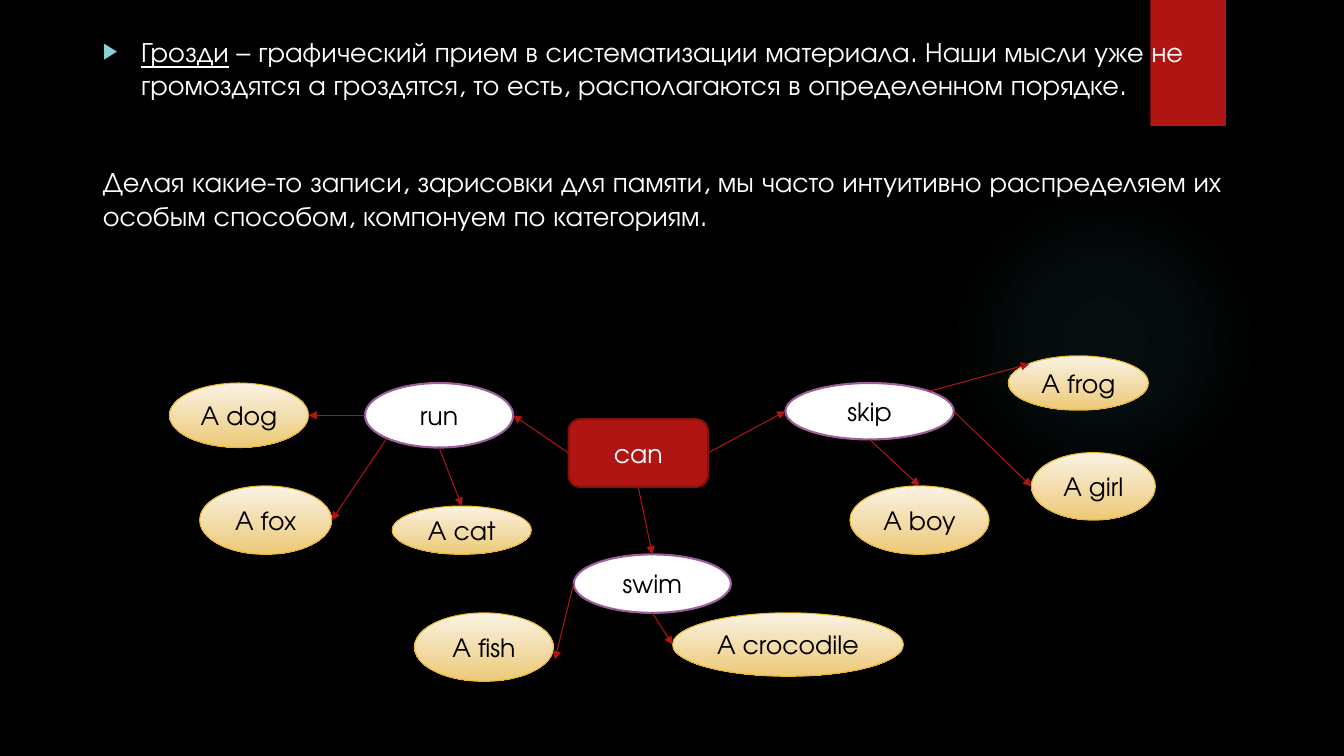
from lxml.etree import SubElement as Sub
from pptx import Presentation
from pptx.dml.color import RGBColor
from pptx.enum.shapes import MSO_CONNECTOR as Link, MSO_SHAPE as Shape
from pptx.enum.text import MSO_ANCHOR as Anchor, MSO_AUTO_SIZE as AutoSize, PP_ALIGN as Align
from pptx.oxml import parse_xml
from pptx.oxml.ns import nsdecls, qn
from pptx.util import Pt

PX = 9144
FONT = "TeX Gyre Adventor"
RED, WHITE, BLACK = "B01513", "FFFFFF", "000000"
CREAM = ("FAF2E3", "ECC977")

STYLES = {
    "root": (Shape.ROUNDED_RECTANGLE, RED, "82100E", 1.5, WHITE),
    "verb": (Shape.OVAL, WHITE, "9E5E9B", 1.5, BLACK),
    "animal": (Shape.OVAL, CREAM, "E6B729", 0.75, BLACK),
}
NODES = {
    "A frog": ("animal", (908, 324, 139, 54)),
    "can": ("root", (472, 387, 138, 67)),
    "run": ("verb", (270, 351, 147, 64)),
    "swim": ("verb", (477, 521, 156, 58)),
    "skip": ("verb", (687, 351, 167, 56)),
    "A dog": ("animal", (76, 351, 138, 64)),
    "A fox": ("animal", (106, 453, 131, 68)),
    "A cat": ("animal", (297, 473, 138, 48)),
    "A fish": ("animal", (319, 579, 138, 68)),
    "A crocodile": ("animal", (575, 579, 229, 63)),
    "A girl": ("animal", (931, 420, 123, 67)),
    "A boy": ("animal", (751, 453, 138, 68)),
}
SITES = {
    "top": (0.5, 0), "bottom": (0.5, 1), "left": (0, 0.5), "right": (1, 0.5),
    "top left": (0.15, 0.15), "top right": (0.85, 0.15),
    "bottom left": (0.15, 0.85), "low right": (1.01, 0.68),
}
ARROWS = [
    ("run", "left", "A dog", "right"),
    ("run", "bottom left", "A fox", "right"),
    ("run", "bottom", "A cat", "top"),
    ("can", "left", "run", "right"),
    ("can", "bottom", "swim", "top"),
    ("can", "right", "skip", "left"),
    ("swim", "left", "A fish", "low right"),
    ("swim", "bottom", "A crocodile", "left"),
    ("skip", "bottom", "A boy", "top"),
    ("skip", "right", "A girl", "left"),
    ("skip", "top right", "A frog", "top left"),
]


def px(*lengths):
    """Turn px lengths into EMU."""
    return [round(length * PX) for length in lengths]


def rgb(value):
    """Turn a hex string into a colour."""
    return RGBColor.from_string(value)


def add_run(paragraph, text, size, color, underline=False):
    """Add one formatted run."""
    run = paragraph.add_run()
    run.text = text
    run.font.name, run.font.size = FONT, Pt(size)
    run.font.color.rgb = rgb(color)
    run.font.underline = underline


def add_plain(slide, kind, box):
    """Add a shape without shadow or outline."""
    shape = slide.shapes.add_shape(kind, *px(*box))
    shape.shadow.inherit = False
    shape.line.fill.background()
    return shape


def draw_backdrop(slide, glow_box, ribbon_box):
    """Draw the black ground, the faint glow and the red ribbon."""
    slide.background.fill.solid()
    slide.background.fill.fore_color.rgb = rgb(BLACK)
    glow = add_plain(slide, Shape.OVAL, glow_box)
    stops = "".join(
        f'<a:gs pos="{place * 1000}"><a:srgbClr val="50B9C1">'
        f'<a:alpha val="{alpha * 1000}"/></a:srgbClr></a:gs>'
        for place, alpha in ((0, 7), (36, 6), (69, 0)))
    glow.element.spPr.find(qn("a:prstGeom")).addnext(parse_xml(
        f'<a:gradFill {nsdecls("a")}><a:gsLst>{stops}</a:gsLst><a:path path="circle">'
        '<a:fillToRect l="50000" t="50000" r="50000" b="50000"/></a:path></a:gradFill>'))
    ribbon = add_plain(slide, Shape.RECTANGLE, ribbon_box)
    ribbon.fill.solid()
    ribbon.fill.fore_color.rgb = rgb(RED)


def write_body(slide, box):
    """Fill the body placeholder with the definition and the remark."""
    body = slide.placeholders[1]
    body.left, body.top, body.width, body.height = px(*box)
    slide.shapes.element.append(body.element)
    frame = body.text_frame
    frame.word_wrap, frame.auto_size = True, AutoSize.NONE
    frame.vertical_anchor = Anchor.TOP

    definition = frame.paragraphs[0]
    props = definition._p.get_or_add_pPr()
    indent = px(38)[0]
    props.set("marL", str(indent))
    props.set("indent", str(-indent))
    Sub(Sub(props, qn("a:buClr")), qn("a:srgbClr")).set("val", "8AD0D6")
    Sub(props, qn("a:buSzPct")).set("val", "80000")
    Sub(props, qn("a:buChar")).set("char", "▶")
    add_run(definition, "Грозди", 20, WHITE, True)
    add_run(definition, " – графический прием в систематизации материала. Наши мысли уже не "
            "громоздятся а гроздятся, то есть, располагаются в определенном порядке.", 20, WHITE)

    remark = frame.add_paragraph()
    props = remark._p.get_or_add_pPr()
    props.set("marL", "0")
    props.set("indent", "0")
    Sub(props, qn("a:buNone"))
    add_run(remark, "Делая какие-то записи, зарисовки для памяти, мы часто интуитивно "
            "распределяем их особым способом, компонуем по категориям.", 20, WHITE)
    definition.space_before, remark.space_before = Pt(0), Pt(45)
    for paragraph in (definition, remark):
        paragraph.alignment, paragraph.line_spacing = Align.LEFT, 1.0


def add_node(slide, label, style, box):
    """Add one labelled node of the cluster."""
    kind, fill, outline, weight, ink = STYLES[style]
    node = add_plain(slide, kind, box)
    if fill == CREAM:
        node.fill.gradient()
        node.fill.gradient_angle = 270
        for stop, color in zip(node.fill.gradient_stops, fill):
            stop.color.rgb = rgb(color)
    else:
        node.fill.solid()
        node.fill.fore_color.rgb = rgb(fill)
    node.line.color.rgb = rgb(outline)
    node.line.width = Pt(weight)
    frame = node.text_frame
    frame.word_wrap, frame.vertical_anchor = True, Anchor.MIDDLE
    frame.margin_left = frame.margin_right = frame.margin_top = frame.margin_bottom = 0
    frame.paragraphs[0].alignment = Align.CENTER
    add_run(frame.paragraphs[0], label, 18, ink)


def draw_cluster(slide, origin):
    """Draw the nodes and arrows of the cluster from its top left corner."""
    boxes = {}
    for label, (style, (x, y, width, height)) in NODES.items():
        boxes[label] = (origin[0] + x, origin[1] + y, width, height)
        add_node(slide, label, style, boxes[label])

    def point(label, site):
        """Find a named site on a node."""
        x, y, width, height = boxes[label]
        across, down = SITES[site]
        return px(x + across * width, y + down * height)

    for source, start, target, end in ARROWS:
        arrow = slide.shapes.add_connector(
            Link.STRAIGHT, *point(source, start), *point(target, end))
        arrow.line.color.rgb = rgb(RED)
        arrow.line.width = Pt(0.75)
        Sub(arrow.line._get_or_add_ln(), qn("a:tailEnd")).set("type", "triangle")
        Sub(arrow.element.spPr, qn("a:effectLst"))


def main():
    """Build the slide and save it."""
    deck = Presentation()
    deck.slide_width, deck.slide_height = px(1333, 750)
    slide = deck.slides.add_slide(deck.slide_layouts[1])
    title = slide.shapes.title.element
    title.getparent().remove(title)
    draw_backdrop(slide, (941, 183, 308, 308), (1141, 0, 75, 125))
    write_body(slide, (92, 29, 1150, 647))
    draw_cluster(slide, (92, 29))
    deck.save("out.pptx")


if __name__ == "__main__":
    main()
